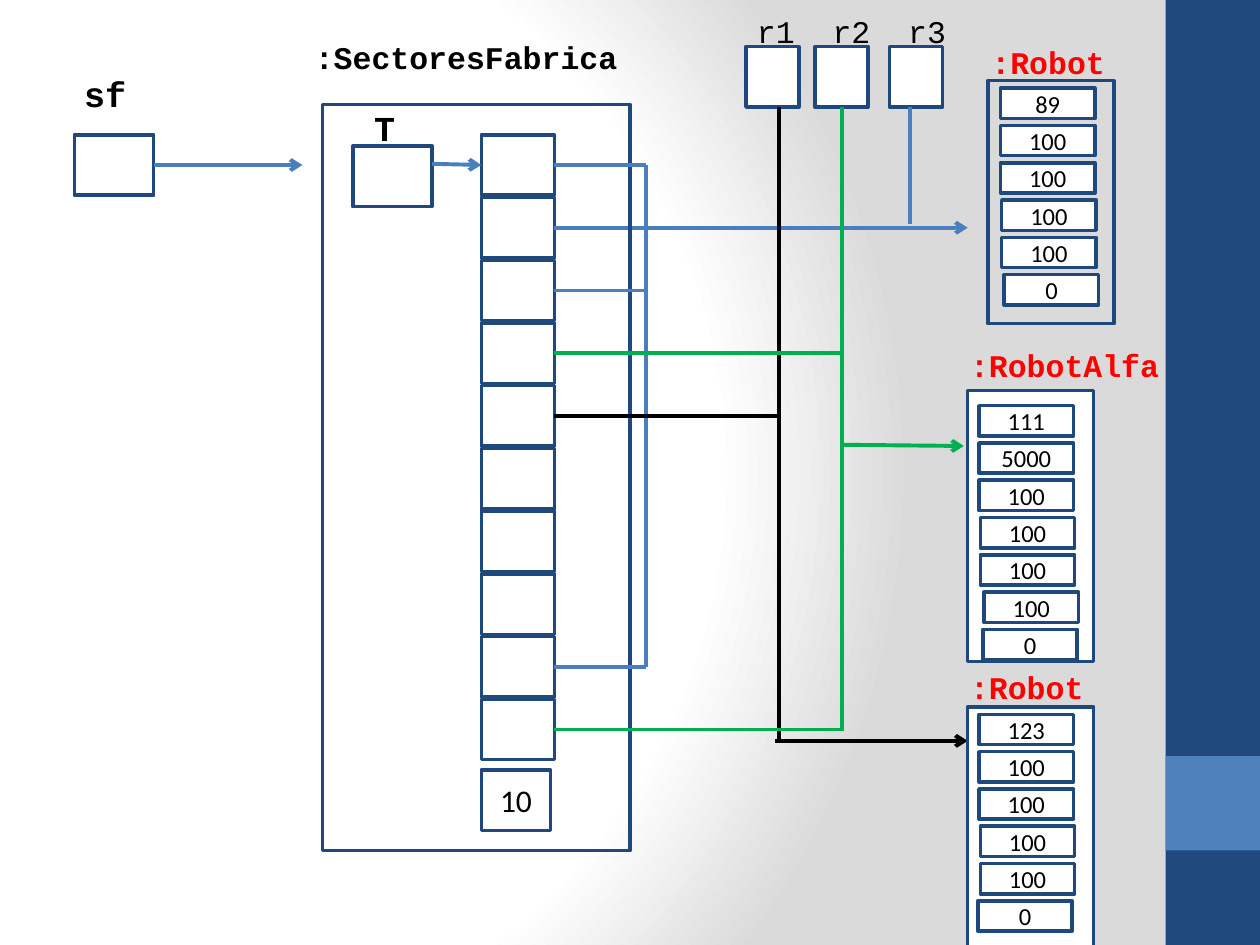
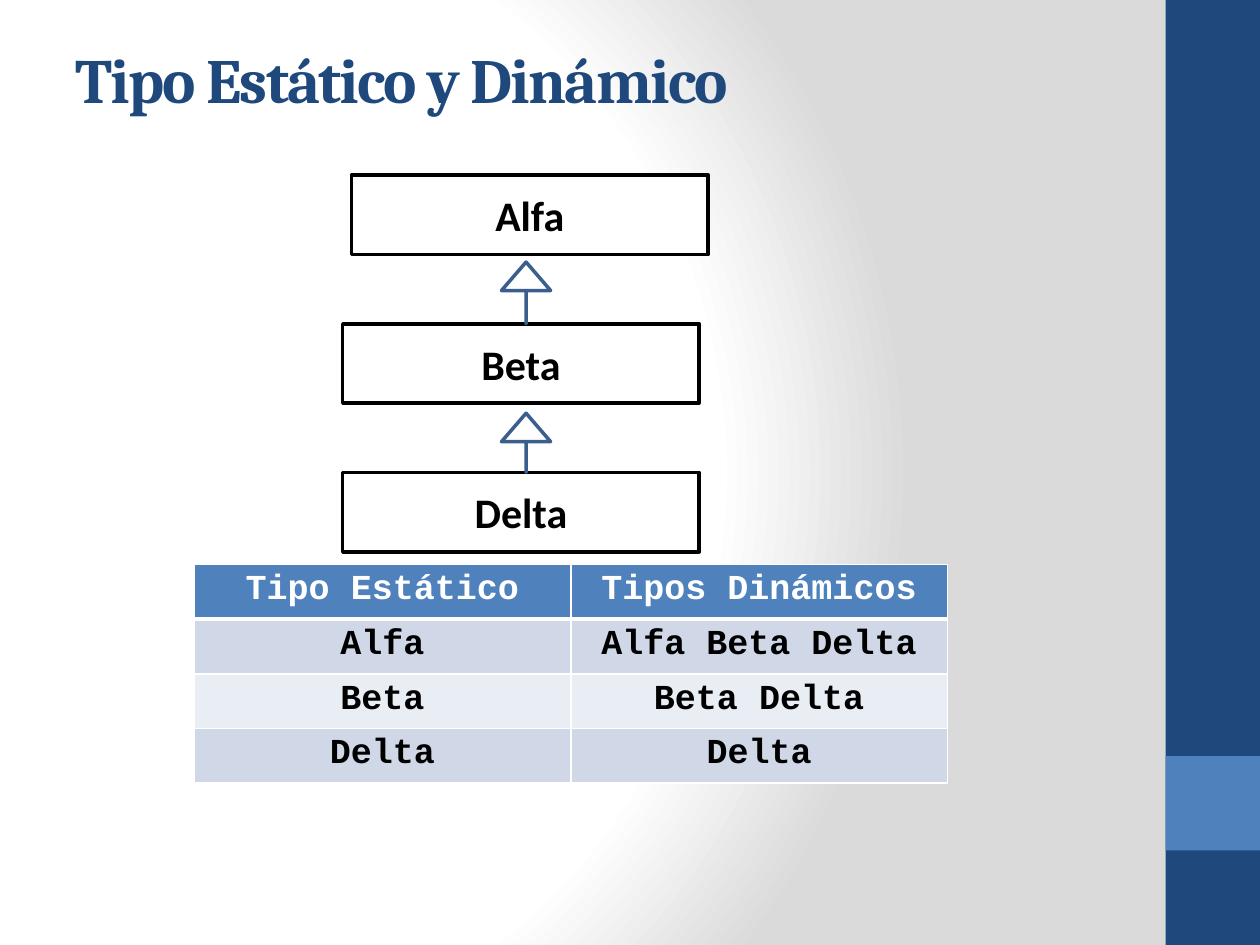
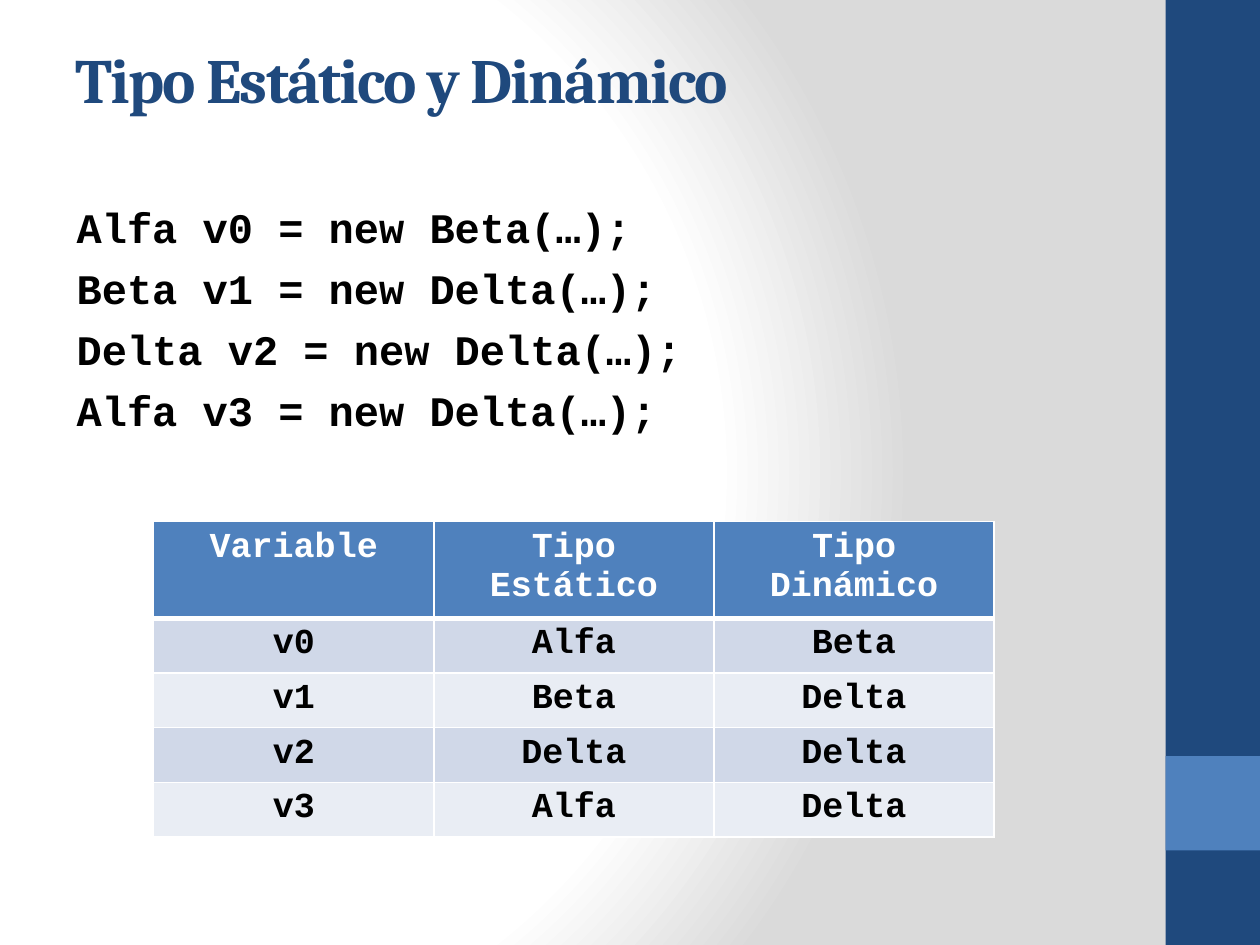
from lxml import etree
from pptx import Presentation
from pptx.dml.color import RGBColor
from pptx.enum.shapes import MSO_CONNECTOR as Connector, MSO_SHAPE as Preset
from pptx.enum.text import MSO_ANCHOR as Anchor, PP_ALIGN as Align
from pptx.oxml import parse_xml
from pptx.oxml.ns import nsdecls, qn
from pptx.util import Inches, Pt

COLORS = {
    "navy": "1F497D", "blue": "4F81BD", "wire": "4B7EBC", "green": "00B050",
    "black": "000000", "white": "FFFFFF", "red": "FF0000", "gray": "DADADA",
    "arrow": "3A5F8C", "band": "D0D8E8", "light": "E9EDF4",
}
BODY, HEADING, CODE = "Calibri", "Cambria", "Courier New"
TITLE = "Tipo Estático y Dinámico"
RIGHT_SIDE, LEFT_SIDE, BOTTOM_SIDE = 3, 1, 2
CELL_LEFT, CELL_TOP, CELL_WIDTH, CELL_HEIGHT = 3.82, 1.07, 0.58, 0.48
CELL_COUNT = 10
CELL_PITCH = (5.55 - CELL_TOP) / (CELL_COUNT - 1)
FIELD_PITCH = 1.48 / 5


def rgb(name):
    return RGBColor.from_string(COLORS[name])


def set_background(presentation):
    master = presentation.slide_master
    master.background.fill.solid()
    properties = master.element.find(".//" + qn("p:bgPr"))
    stops = "".join(
        f'<a:gs pos="{position}"><a:srgbClr val="{COLORS[name]}"/></a:gs>'
        for position, name in ((0, "white"), (75000, "white"), (100000, "gray"))
    )
    gradient = parse_xml(
        f'<a:gradFill {nsdecls("a")} rotWithShape="1"><a:gsLst>{stops}</a:gsLst>'
        '<a:path path="circle"><a:fillToRect l="20000" t="50000" r="100000" b="50000"/>'
        "</a:path></a:gradFill>"
    )
    properties.replace(properties[0], gradient)


def add_run(paragraph, text, size, color="black", font=BODY, bold=False):
    run = paragraph.add_run()
    run.text = text
    run.font.size = Pt(size)
    run.font.name = font
    run.font.bold = bold
    run.font.color.rgb = rgb(color)
    return run


def add_box(slide, left, top, width, height, fill="white", line="navy", preset=Preset.RECTANGLE):
    shape = slide.shapes.add_shape(
        preset, Inches(left), Inches(top), Inches(width), Inches(height))
    shape.shadow.inherit = False
    if fill:
        shape.fill.solid()
        shape.fill.fore_color.rgb = rgb(fill)
    else:
        shape.fill.background()
    if line:
        shape.line.color.rgb = rgb(line)
        shape.line.width = Pt(2)
    else:
        shape.line.fill.background()
    return shape


def add_text_box(slide, left, top, width, height):
    frame = slide.shapes.add_textbox(
        Inches(left), Inches(top), Inches(width), Inches(height)).text_frame
    frame.word_wrap = True
    return frame


def add_caption(shape, text, size, bold=False, wrap=True):
    frame = shape.text_frame
    frame.word_wrap = wrap
    frame.vertical_anchor = Anchor.MIDDLE
    paragraph = frame.paragraphs[0]
    paragraph.alignment = Align.CENTER
    add_run(paragraph, text, size, bold=bold)


def add_label(slide, left, top, width, text, size=18, color="black", bold=True):
    frame = add_text_box(slide, left, top, width, 0.4)
    add_run(frame.paragraphs[0], text, size, color, CODE, bold)
    return frame


def add_wire(slide, start, end, color, arrow=False, source=None, target=None):
    points = [Inches(value) for value in (*start, *end)]
    wire = slide.shapes.add_connector(Connector.STRAIGHT, *points)
    wire.line.color.rgb = rgb(color)
    wire.line.width = Pt(2.25)
    if arrow:
        line = wire.line._get_or_add_ln()
        etree.SubElement(line, qn("a:tailEnd"), type="arrow")
    etree.SubElement(wire._element.spPr, qn("a:effectLst"))
    if source:
        wire.begin_connect(*source)
    if target:
        wire.end_connect(*target)


def add_slide(presentation, title=None):
    slide = presentation.slides.add_slide(presentation.slide_layouts[6])
    add_box(slide, 9.25, 0, 0.75, 7.5, "navy", None)
    add_box(slide, 9.25, 6, 0.75, 0.75, "blue", None)
    if title:
        frame = add_text_box(slide, 0.5, 0, 8.33, 1.25)
        frame.vertical_anchor = Anchor.MIDDLE
        run = add_run(frame.paragraphs[0], title, 36, "navy", HEADING, True)
        run._r.get_or_add_rPr().set("spc", "-100")
    return slide


def add_cell_border(cell, side, points):
    border = parse_xml(
        f'<a:{side} {nsdecls("a")} w="{Pt(points)}"><a:solidFill>'
        f'<a:srgbClr val="{COLORS["white"]}"/></a:solidFill></a:{side}>'
    )
    cell._tc.get_or_add_tcPr().append(border)


def add_type_table(slide, left, top, width, rows, header_height, row_height):
    height = header_height + row_height * (len(rows) - 1)
    table = slide.shapes.add_table(
        len(rows), len(rows[0]), Inches(left), Inches(top), Inches(width), Inches(height)).table
    for column in table.columns:
        column.width = Inches(width / len(rows[0]))
    for row_index, texts in enumerate(rows):
        is_header = row_index == 0
        table.rows[row_index].height = Inches(header_height if is_header else row_height)
        fill = "blue" if is_header else ("light", "band")[row_index % 2]
        borders = {"lnL": 1, "lnR": 1, "lnT": 3 if row_index == 1 else 1,
                   "lnB": 3 if is_header else 1}
        for column_index, text in enumerate(texts):
            cell = table.cell(row_index, column_index)
            for side, points in borders.items():
                add_cell_border(cell, side, points)
            cell.fill.solid()
            cell.fill.fore_color.rgb = rgb(fill)
            paragraph = cell.text_frame.paragraphs[0]
            paragraph.alignment = Align.CENTER
            add_run(paragraph, text, 20, "white" if is_header else "black", CODE, True)


def add_robot(slide, label, label_place, panel, fill, first_field, fields):
    add_box(slide, *panel, fill=fill)
    add_label(slide, *label_place, label, color="red")
    left, top = first_field
    for index, (value, shift) in enumerate(fields):
        field = add_box(slide, left + shift, top + index * FIELD_PITCH, 0.75, 0.24)
        add_caption(field, value, 14)


def add_reference_names(slide):
    frame = add_label(slide, 5.91, 0.05, 1.77, "r1\tr2\tr3", bold=False)
    properties = frame.paragraphs[0]._p.get_or_add_pPr()
    tabs = etree.SubElement(properties, qn("a:tabLst"))
    for stop in (0.6, 1.2):
        etree.SubElement(tabs, qn("a:tab"), pos=str(Inches(stop)), algn="l")


def build_factory_slide(presentation):
    slide = add_slide(presentation)
    cells = [add_box(slide, CELL_LEFT, CELL_TOP + index * CELL_PITCH, CELL_WIDTH, CELL_HEIGHT)
             for index in range(CELL_COUNT)]
    middles = [CELL_TOP + index * CELL_PITCH + CELL_HEIGHT / 2 for index in range(CELL_COUNT)]
    references = [add_box(slide, left, 0.37, 0.42, 0.48) for left in (5.92, 6.47, 7.06)]
    add_reference_names(slide)

    def add_branch(index, end, color, arrow=False):
        add_wire(slide, (CELL_LEFT + CELL_WIDTH, middles[index]), (end, middles[index]),
                 color, arrow, source=(cells[index], RIGHT_SIDE))

    add_branch(1, 7.68, "wire", True)
    add_wire(slide, (6.68, 3.53), (7.65, 3.54), "green", True)
    add_wire(slide, (6.15, 5.88), (7.68, 5.88), "black", True)
    add_wire(slide, (6.18, 5.88), (6.18, 0.85), "black")
    add_wire(slide, (6.68, 5.8), (6.68, 0.85), "green", target=(references[1], BOTTOM_SIDE))
    add_wire(slide, (7.22, 1.78), (7.22, 0.85), "wire")
    add_box(slide, 2.56, 0.83, 2.44, 5.92, None)
    add_wire(slide, (5.13, middles[0]), (5.13, middles[8]), "wire")
    for index, end, color in ((0, 5.13, "wire"), (2, 5.13, "wire"), (8, 5.13, "wire"),
                              (3, 6.68, "green"), (9, 6.68, "green"), (4, 6.18, "black")):
        add_branch(index, end, color)

    add_box(slide, 2.8, 1.16, 0.63, 0.48)
    add_caption(add_box(slide, CELL_LEFT, 6.11, 0.55, 0.48), "10", 18)
    add_wire(slide, (3.43, 1.3), (CELL_LEFT, middles[0]), "wire", True,
             target=(cells[0], LEFT_SIDE))
    sector = add_box(slide, 0.59, 1.07, 0.63, 0.48)
    add_wire(slide, (1.22, 1.31), (2.4, 1.31), "wire", True, source=(sector, RIGHT_SIDE))
    add_label(slide, 2.87, 0.8, 0.65, "T", 20)
    add_label(slide, 0.57, 0.53, 0.65, "sf", 20)
    add_label(slide, 2.4, 0.25, 2.78, ":SectoresFabrica")

    add_robot(slide, ":Robot", (7.6, 5.25, 1.18), (7.68, 5.61, 1, 1.93), "white", (7.77, 5.67),
              [("123", 0), ("100", 0), ("100", 0), ("100", 0.01), ("100", 0.01), ("0", -0.01)])
    add_robot(slide, ":RobotAlfa", (7.6, 2.7, 1.81), (7.68, 3.1, 1, 2.15), "white", (7.77, 3.22),
              [("111", 0), ("5000", 0), ("100", 0), ("100", 0.01), ("100", 0.01),
               ("100", 0.04), ("0", 0.03)])
    add_robot(slide, ":Robot", (7.77, 0.29, 1.18), (7.84, 0.64, 1, 1.93), None, (7.94, 0.7),
              [("89", 0), ("100", 0), ("100", 0), ("100", 0.01), ("100", 0.01), ("0", 0.03)])


def build_hierarchy_slide(presentation):
    slide = add_slide(presentation, TITLE)
    for name, left, top in (("Alfa", 2.79, 1.39), ("Beta", 2.72, 2.57), ("Delta", 2.72, 3.75)):
        box = add_box(slide, left, top, 2.83, 0.63, line="black")
        add_caption(box, name, 24, bold=True, wrap=False)
    for left, top, length in ((3.93, 2.13, 0.49), (3.94, 3.32, 0.47)):
        arrow = add_box(slide, left, top, length, 0.39, line="arrow", preset=Preset.LEFT_ARROW)
        arrow.adjustments[0] = 0
        arrow.adjustments[1] = 0.58
        arrow.rotation = 90
    rows = [("Tipo Estático", "Tipos Dinámicos"), ("Alfa", "Alfa Beta Delta"),
            ("Beta", "Beta Delta"), ("Delta", "Delta")]
    add_type_table(slide, 1.54, 4.48, 5.98, rows, 0.41, 0.41)


def build_variables_slide(presentation):
    slide = add_slide(presentation, TITLE)
    frame = add_text_box(slide, 0.51, 1.55, 8.24, 1.97)
    declarations = ("Alfa v0 = new Beta(…);", "Beta v1 = new Delta(…);",
                    "Delta v2 = new Delta(…);", "Alfa v3 = new Delta(…);")
    for index, text in enumerate(declarations):
        paragraph = frame.add_paragraph() if index else frame.paragraphs[0]
        paragraph.space_before = Pt(6)
        add_run(paragraph, text, 24, font=CODE, bold=True)
    rows = [("Variable", "Tipo Estático", "Tipo Dinámico"), ("v0", "Alfa", "Beta"),
            ("v1", "Beta", "Delta"), ("v2", "Delta", "Delta"), ("v3", "Alfa", "Delta")]
    add_type_table(slide, 1.22, 4.14, 6.67, rows, 0.76, 0.43)


def main():
    presentation = Presentation()
    presentation.slide_width = Inches(10)
    presentation.slide_height = Inches(7.5)
    set_background(presentation)
    build_factory_slide(presentation)
    build_hierarchy_slide(presentation)
    build_variables_slide(presentation)
    presentation.save("out.pptx")


if __name__ == "__main__":
    main()
